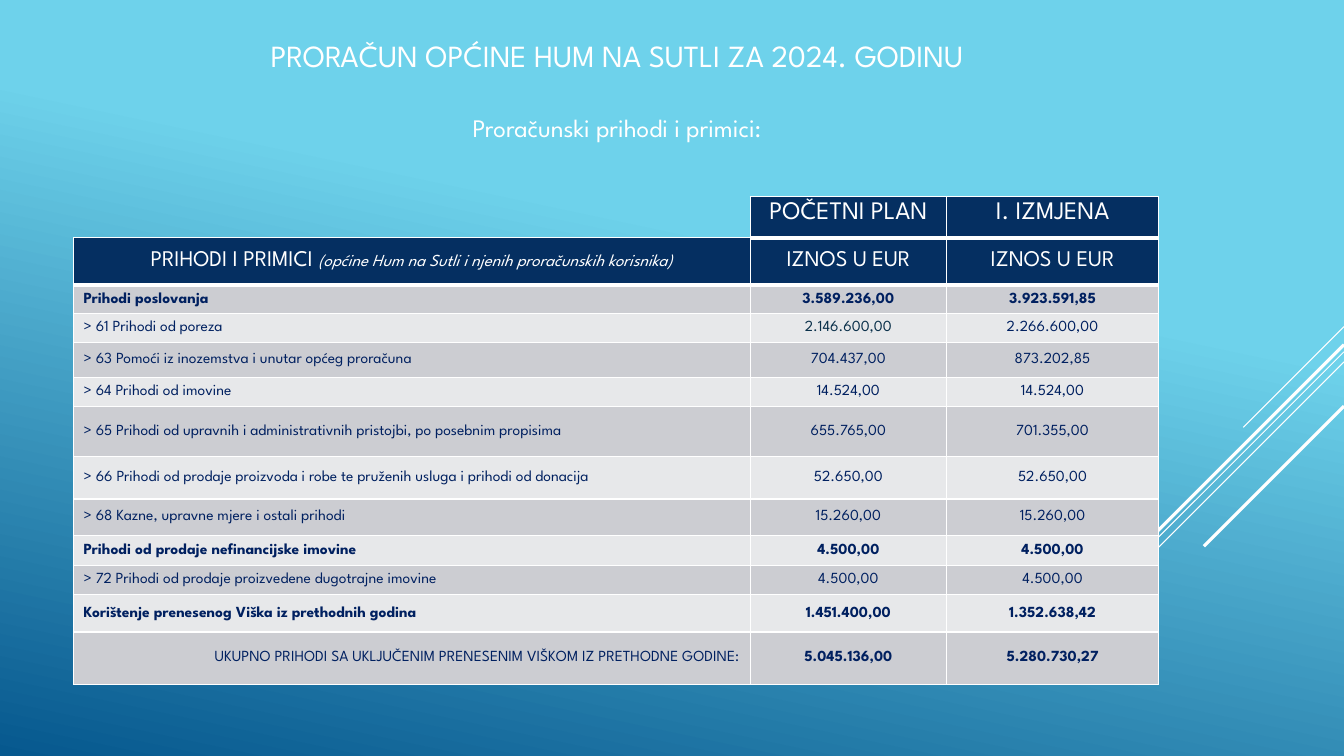
from dataclasses import dataclass

from pptx import Presentation
from pptx import util as u
from pptx.dml.color import RGBColor
from pptx.enum import shapes, text
from pptx.oxml import parse_xml
from pptx.oxml.ns import nsdecls


@dataclass
class Theme:
    font: str = "League Spartan"
    sky: str = "6ED2EB"
    deep: str = "06588E"
    white: str = "FFFFFF"
    navy: str = "052F61"
    ink: str = "002060"
    dark_ink: str = "0A304A"
    bands: tuple = ("CCCDD2", "E7E8EA")
    title: int = 22
    subtitle: int = 18
    header: int = 16
    note: int = 12
    body: int = 11


theme = Theme()
LEFT, CENTER, RIGHT = text.PP_ALIGN.LEFT, text.PP_ALIGN.CENTER, text.PP_ALIGN.RIGHT


def style_text(frame, size, color, align=CENTER, bold=False):
    frame.paragraphs[0].alignment = align
    for run in frame.paragraphs[0].runs:
        run.font.name, run.font.size, run.font.bold = theme.font, u.Pt(size), bold
        run.font.color.rgb = RGBColor.from_string(color)


def paint_cell(cell, fill, top=1, bottom=1):
    """Fill a cell and give it white borders; top and bottom are widths in points."""
    cell.fill.solid()
    cell.fill.fore_color.rgb = RGBColor.from_string(fill)
    borders = (("L", 1), ("R", 1), ("T", top), ("B", bottom))
    for place, (side, width) in enumerate(borders):
        cell._tc.get_or_add_tcPr().insert(place, parse_xml(
            f'<a:ln{side} {nsdecls("a")} w="{u.Pt(width)}"><a:solidFill>'
            f'<a:srgbClr val="{theme.white}"/></a:solidFill></a:ln{side}>'))


deck = Presentation()
deck.slide_width, deck.slide_height = u.Inches(13.33), u.Inches(7.5)
slide = deck.slides.add_slide(deck.slide_layouts[6])

# Background gradient
backdrop = slide.background.fill
backdrop.gradient()
backdrop.gradient_angle = 258
for stop, position, color in zip(backdrop.gradient_stops, (0.35, 1), (theme.sky, theme.deep)):
    stop.position = position
    stop.color.rgb = RGBColor.from_string(color)

# Diagonal rays at 45 degrees from the right edge: start height, run, weight
for start, run, weight in ((3.24, 1, 0.75), (3.49, 3.26, 0.75), (3.59, 2.07, 0.75),
                           (3.42, 1.91, 2.25), (4.03, 1.39, 2.25)):
    ray = slide.shapes.add_connector(
        shapes.MSO_CONNECTOR.STRAIGHT, deck.slide_width, u.Inches(start),
        deck.slide_width - u.Inches(run), u.Inches(start + run))
    ray.line.color.rgb = RGBColor.from_string(theme.white)
    ray.line.width = u.Pt(weight)
    ray._element.spPr.append(parse_xml(f'<a:effectLst {nsdecls("a")}/>'))

# Headings
for wording, top, size in (
        ("PRORAČUN OPĆINE HUM NA SUTLI ZA 2024. GODINU", 0.3, theme.title),
        ("Proračunski prihodi i primici:", 1.01, theme.subtitle)):
    heading = slide.shapes.add_textbox(
        u.Inches(0.83), u.Inches(top), u.Inches(10.58), u.Inches(0.5)).text_frame
    heading.word_wrap = True
    heading.vertical_anchor = text.MSO_ANCHOR.MIDDLE
    heading.text = wording
    style_text(heading, size, theme.white)

# Budget table: label, initial plan, first amendment, row height
budget = (
    ("PRIHODI I PRIMICI ", "IZNOS U EUR", "IZNOS U EUR", 0.47),
    ("Prihodi poslovanja", "3.589.236,00", "3.923.591,85", 0.25),
    ("> 61 Prihodi od poreza", "2.146.600,00", "2.266.600,00", 0.27),
    ("> 63 Pomoći iz inozemstva i unutar općeg proračuna", "704.437,00", "873.202,85", 0.35),
    ("> 64 Prihodi od imovine", "14.524,00", "14.524,00", 0.26),
    ("> 65 Prihodi od upravnih i administrativnih pristojbi, po posebnim propisima",
     "655.765,00", "701.355,00", 0.5),
    ("> 66 Prihodi od prodaje proizvoda i robe te pruženih usluga i prihodi od donacija",
     "52.650,00", "52.650,00", 0.42),
    ("> 68 Kazne, upravne mjere i ostali prihodi", "15.260,00", "15.260,00", 0.36),
    ("Prihodi od prodaje nefinancijske imovine", "4.500,00", "4.500,00", 0.3),
    ("> 72 Prihodi od prodaje proizvedene dugotrajne imovine", "4.500,00", "4.500,00", 0.29),
    ("Korištenje prenesenog Viška iz prethodnih godina", "1.451.400,00", "1.352.638,42", 0.37),
    ("UKUPNO PRIHODI SA UKLJUČENIM PRENESENIM VIŠKOM IZ PRETHODNE GODINE:",
     "5.045.136,00", "5.280.730,27", 0.52),
)
columns = (6.71, 1.95, 2.1)
left, top = 0.73, 2.36
last = len(budget) - 1
group_rows = (1, 8, 10)

revenue = slide.shapes.add_table(
    len(budget), len(columns), u.Inches(left), u.Inches(top),
    u.Inches(sum(columns)), u.Inches(sum(row[-1] for row in budget))).table
for column, width in zip(revenue.columns, columns):
    column.width = u.Inches(width)
for r, (*entries, height) in enumerate(budget):
    revenue.rows[r].height = u.Inches(height)
    for c, entry in enumerate(entries):
        cell = revenue.cell(r, c)
        cell.text_frame.text = entry
        cell.vertical_anchor = text.MSO_ANCHOR.MIDDLE
        if r == 0:
            paint_cell(cell, theme.navy, top=1 if c == 0 else 3, bottom=3)
            style_text(cell.text_frame, theme.header, theme.white)
            continue
        paint_cell(cell, theme.bands[(r + 1) % 2], top=3 if r == 1 else 1)
        align = CENTER if c else RIGHT if r == last else LEFT
        bold = r in group_rows or (r == last and c > 0)
        color = theme.dark_ink if (r, c) == (2, 1) else theme.ink
        style_text(cell.text_frame, theme.body, color, align, bold)

label = revenue.cell(0, 0).text_frame
note = label.paragraphs[0].add_run()
note.text = "(općine Hum na Sutli i njenih proračunskih korisnika)"
style_text(label, theme.header, theme.white)
note.font.size, note.font.italic = u.Pt(theme.note), True

# Plan names above the two amount columns
plan_height = 0.41
plans = slide.shapes.add_table(
    1, 2, u.Inches(left + columns[0]), u.Inches(top - plan_height),
    u.Inches(sum(columns[1:])), u.Inches(plan_height)).table
for c, plan in enumerate(("POČETNI PLAN", "I. IZMJENA")):
    plans.columns[c].width = u.Inches(columns[c + 1])
    cell = plans.cell(0, c)
    cell.text_frame.text = plan
    paint_cell(cell, theme.navy, bottom=3)
    style_text(cell.text_frame, theme.subtitle, theme.white)

deck.save("out.pptx")
